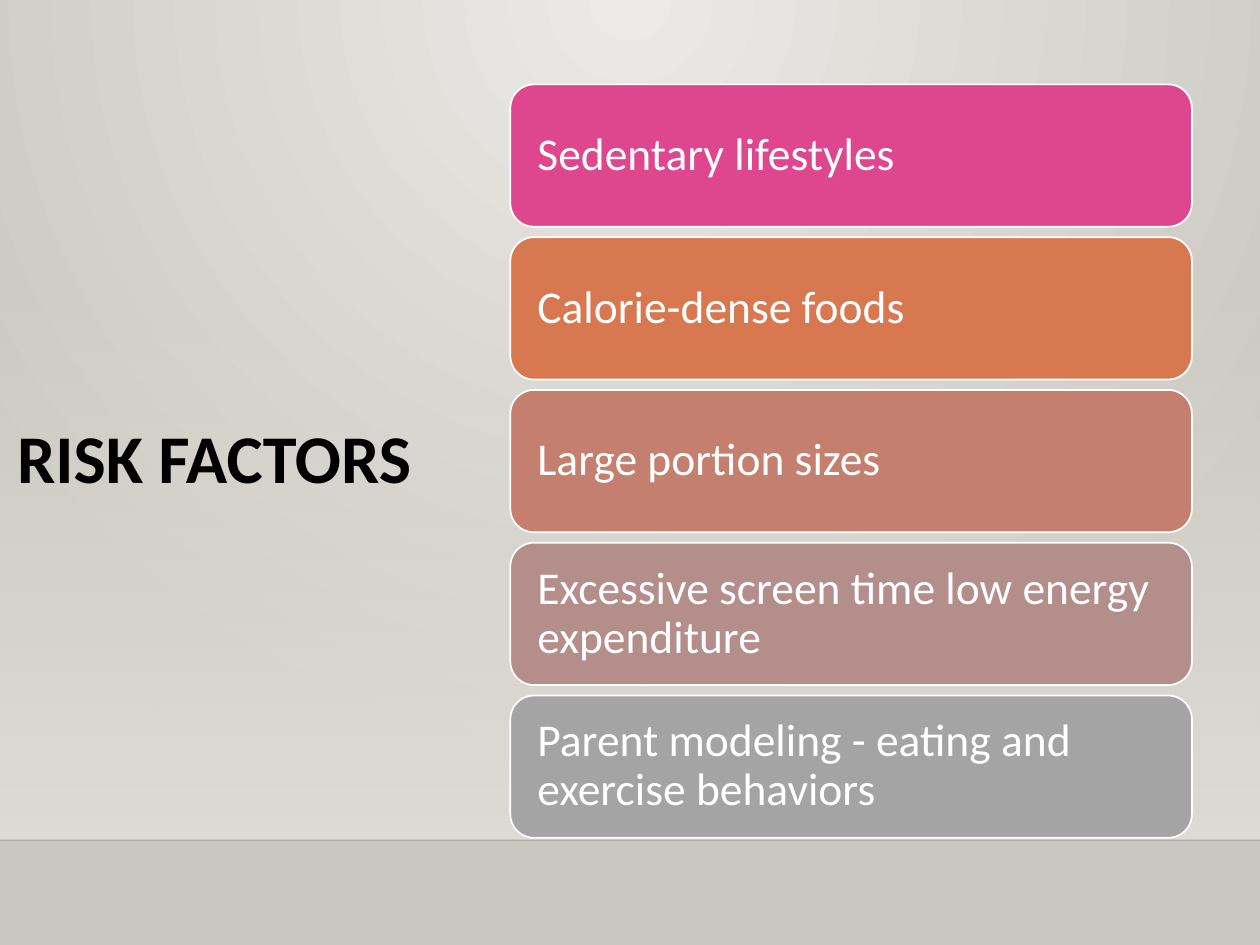
import pptx
import pptx.dml.color
import pptx.enum.shapes
import pptx.enum.text
import pptx.oxml
import pptx.oxml.ns
import pptx.util

Inches = pptx.util.Inches
Pt = pptx.util.Pt

TITLE = "RISK FACTORS"
FACTORS = [
    ("Sedentary lifestyles", "DE478E"),
    ("Calorie-dense foods", "D77850"),
    ("Large portion sizes", "C47F6E"),
    ("Excessive screen time low energy expenditure", "B38E8A"),
    ("Parent modeling - eating and exercise behaviors", "A4A4A4"),
]
THEME = {
    "font": "Calibri", "title_size": 39, "factor_size": 26,
    "title": "000000", "light": "FFFFFF",
    "glow": "ECEAE7", "edge": "CAC7C1", "wall": "DFDBD5", "floor_line": "000001",
}
WIDTH, HEIGHT = 10, 7.5
WALL_TOP, FLOOR_TOP = 2.2, 6.67
BAR_LEFT, BAR_TOP, BAR_WIDTH, BAR_HEIGHT, BAR_PITCH = 4.05, 0.67, 5.41, 1.13, 1.2125
BAR_INSET = 0.16


def color(name):
    return pptx.dml.color.RGBColor.from_string(THEME.get(name, name))


def xml(markup):
    namespace = pptx.oxml.ns.nsdecls("a")
    return pptx.oxml.parse_xml(markup.replace(">", f" {namespace}>", 1))


def set_gradient(fill, owner, stops, direction):
    """Fill owner with (position, colour, opacity) stops, all in percent."""
    fill.gradient()
    gradient = owner.find(".//" + pptx.oxml.ns.qn("a:gradFill"))
    for child in list(gradient):
        gradient.remove(child)
    stop_markup = "".join(
        f'<a:gs pos="{position * 1000}"><a:srgbClr val="{THEME[name]}">'
        f'<a:alpha val="{opacity * 1000}"/></a:srgbClr></a:gs>'
        for position, name, opacity in stops
    )
    gradient.append(xml(f"<a:gsLst>{stop_markup}</a:gsLst>"))
    gradient.append(xml(direction))


def write(shape, text, size, color_name, inset, bold=False, align="LEFT"):
    frame = shape.text_frame
    frame.word_wrap = True
    frame.vertical_anchor = pptx.enum.text.MSO_ANCHOR.MIDDLE
    frame.margin_left = frame.margin_right = Inches(inset)
    frame.margin_top = frame.margin_bottom = Inches(0.05)
    frame.text = text
    para = frame.paragraphs[0]
    para.alignment = getattr(pptx.enum.text.PP_ALIGN, align)
    para.line_spacing = 0.9
    font = para.runs[0].font
    font.name, font.size, font.bold = THEME["font"], Pt(size), bold
    font.color.rgb = color(color_name)


def add_backdrop(page):
    set_gradient(
        page.background.fill, page.element,
        [(0, "glow", 100), (100, "edge", 100)],
        '<a:path path="circle"><a:fillToRect l="43000" t="0" r="43000" b="100000"/></a:path>',
    )
    wall = page.shapes.add_shape(
        pptx.enum.shapes.MSO_SHAPE.RECTANGLE,
        0, Inches(WALL_TOP), Inches(WIDTH), Inches(FLOOR_TOP - WALL_TOP),
    )
    wall.shadow.inherit = False
    wall.line.fill.background()
    set_gradient(
        wall.fill, wall.element,
        [(0, "wall", 0), (100, "wall", 100)],
        '<a:lin ang="5400000" scaled="0"></a:lin>',
    )
    floor_line = page.shapes.add_connector(
        pptx.enum.shapes.MSO_CONNECTOR.STRAIGHT,
        0, Inches(FLOOR_TOP), Inches(WIDTH), Inches(FLOOR_TOP),
    )
    floor_line.line.width = Pt(1)
    floor_line.line.color.rgb = color("floor_line")
    properties = floor_line.element.spPr
    properties.find(".//" + pptx.oxml.ns.qn("a:srgbClr")).append(
        xml('<a:alpha val="20000"></a:alpha>'))
    properties.append(xml("<a:effectLst></a:effectLst>"))


def add_factor(page, index, text, fill):
    bar = page.shapes.add_shape(
        pptx.enum.shapes.MSO_SHAPE.ROUNDED_RECTANGLE,
        Inches(BAR_LEFT), Inches(BAR_TOP + index * BAR_PITCH),
        Inches(BAR_WIDTH), Inches(BAR_HEIGHT),
    )
    bar.shadow.inherit = False
    bar.adjustments[0] = 0.167
    bar.fill.solid()
    bar.fill.fore_color.rgb = color(fill)
    bar.line.color.rgb = color("light")
    bar.line.width = Pt(1)
    write(bar, text, THEME["factor_size"], "light", BAR_INSET)


def main():
    deck = pptx.Presentation()
    deck.slide_width, deck.slide_height = Inches(WIDTH), Inches(HEIGHT)
    page = deck.slides.add_slide(deck.slide_layouts[6])
    add_backdrop(page)
    title = page.shapes.add_textbox(0, Inches(0.64), Inches(3.4), Inches(6.04))
    write(title, TITLE, THEME["title_size"], "title", 0.1, bold=True, align="CENTER")
    for index, (text, fill) in enumerate(FACTORS):
        add_factor(page, index, text, fill)
    deck.save("out.pptx")


if __name__ == "__main__":
    main()
